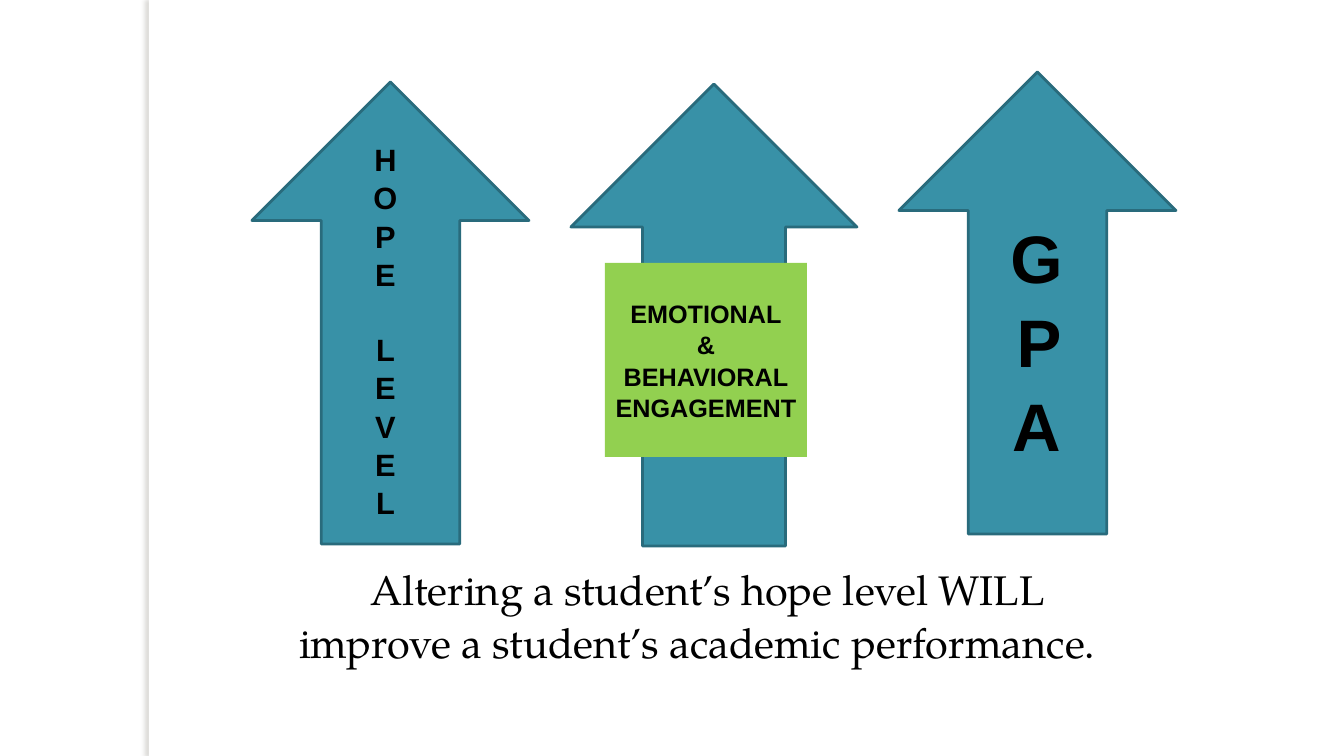
from lxml.etree import SubElement
from pptx import Presentation
from pptx.dml.color import RGBColor
from pptx.enum.shapes import MSO_SHAPE
from pptx.enum.text import MSO_ANCHOR, MSO_AUTO_SIZE, PP_ALIGN
from pptx.oxml.ns import qn
from pptx.util import Emu, Pt

PX = 9071  # EMU per px, at 100.8 px to the inch
COLORS = {
    "page": "FFFFFF", "margin_shadow": "736F63", "arrow": "3891A7",
    "arrow_edge": "296B7C", "engagement": "92D050", "text": "000000",
}


def px(*lengths):
    return [Emu(length * PX) for length in lengths]


def color(name):
    return RGBColor.from_string(COLORS[name])


def add_filled(slide, kind, box, fill):
    shape = slide.shapes.add_shape(kind, *px(*box))
    shape.shadow.inherit = False
    shape.fill.solid()
    shape.fill.fore_color.rgb = color(fill)
    shape.line.fill.background()
    return shape


def add_run(paragraph, text, font_name, size, bold=False):
    run = paragraph.add_run()
    run.text = text
    run.font.name = font_name
    run.font.size = Pt(size)
    run.font.bold = bold
    run.font.color.rgb = color("text")


def write_label(frame, lines, size, gap=0):
    """Write centred bold lines, with gap points between paragraphs."""
    frame.word_wrap = True
    for index, line in enumerate(lines):
        paragraph = frame.add_paragraph() if index else frame.paragraphs[0]
        paragraph.alignment = PP_ALIGN.CENTER
        paragraph.line_spacing = 1.04
        if index:
            paragraph.space_before = Pt(gap)
        add_run(paragraph, line, "Arial", size, bold=True)


def add_page_margin(slide, box):
    margin = add_filled(slide, MSO_SHAPE.RECTANGLE, box, "page")
    effects = margin._element.spPr.find(qn("a:effectLst"))
    shadow = SubElement(effects, qn("a:outerShdw"), blurRad=str(Pt(3)),
                        dist=str(Pt(3)), dir="10800000", rotWithShape="0")
    tint = SubElement(shadow, qn("a:srgbClr"), val=COLORS["margin_shadow"])
    SubElement(tint, qn("a:alpha"), val="25000")


def add_arrow(slide, box):
    arrow = add_filled(slide, MSO_SHAPE.UP_ARROW, box, "arrow")
    arrow.line.color.rgb = color("arrow_edge")
    arrow.line.width = Pt(2)


def add_stacked_arrow(slide, box, label_box, words, size, gap=0):
    """Add an arrow whose label is so narrow that letters stack."""
    left, top = box[:2]
    dx, dy, width, height = label_box
    add_arrow(slide, box)
    label = slide.shapes.add_textbox(*px(left + dx, top + dy, width, height))
    write_label(label.text_frame, words, size, gap)


def add_engagement_arrow(slide, box):
    left, top = box[:2]
    add_arrow(slide, box)
    card = add_filled(slide, MSO_SHAPE.RECTANGLE,
                      (left + 34, top + 179, 202, 194), "engagement")
    frame = card.text_frame
    frame.vertical_anchor = MSO_ANCHOR.MIDDLE
    write_label(frame, ["EMOTIONAL", "&", "BEHAVIORAL", "ENGAGEMENT"], 18)
    frame.margin_left = frame.margin_right = px(5)[0]


def write_conclusion(placeholder, box):
    placeholder.left, placeholder.top, placeholder.width, placeholder.height = px(*box)
    frame = placeholder.text_frame
    frame.word_wrap = True
    frame.auto_size = MSO_AUTO_SIZE.NONE
    frame.margin_left = frame.margin_right = frame.margin_top = frame.margin_bottom = 0
    lines = [(151, "Altering a student’s hope level WILL"),
             (80, "improve a student’s academic performance.")]
    for index, (indent, line) in enumerate(lines):
        paragraph = frame.add_paragraph() if index else frame.paragraphs[0]
        properties = paragraph._p.get_or_add_pPr()
        properties.set("marL", str(indent * PX))
        properties.set("indent", "0")
        SubElement(properties, qn("a:buNone"))
        paragraph.alignment = PP_ALIGN.LEFT
        paragraph.line_spacing = 0.9
        paragraph.space_before = Pt(6 if index else 0)
        add_run(paragraph, line, "TeX Gyre Pagella", 29.6)


def main():
    deck = Presentation()
    deck.slide_width, deck.slide_height = px(1344, 756)
    slide = deck.slides.add_slide(deck.slide_layouts[1])
    title = slide.shapes.title._element
    title.getparent().remove(title)

    add_page_margin(slide, (149, 0, 11, 756))
    write_conclusion(slide.placeholders[1], (219, 570, 907, 110))
    add_stacked_arrow(slide, (252, 82, 277, 462), (105, 52, 57, 383),
                      ["HOPE", "LEVEL"], 22, gap=26)
    add_stacked_arrow(slide, (899, 72, 277, 462), (99, 136, 77, 254), ["GPA"], 48)
    add_engagement_arrow(slide, (571, 84, 286, 462))
    deck.save("out.pptx")


if __name__ == "__main__":
    main()
